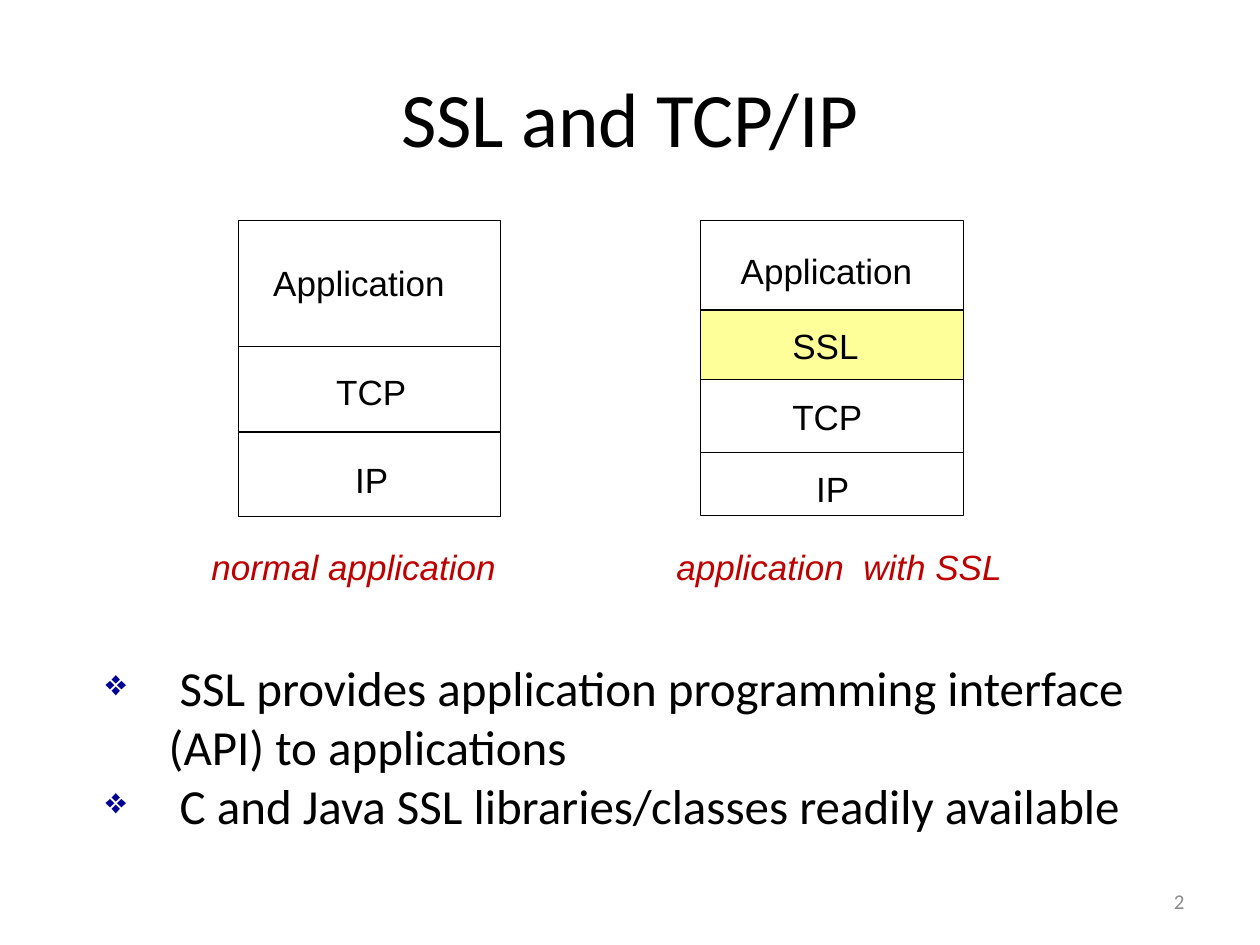
from dataclasses import dataclass

import pptx
import pptx.dml.color
import pptx.enum.shapes
import pptx.enum.text
import pptx.oxml
import pptx.oxml.ns
import pptx.util
from pptx.util import Inches

ALIGN = pptx.enum.text.PP_ALIGN
ANCHOR = pptx.enum.text.MSO_ANCHOR
COLORS = {
    "text": "000000",
    "caption": "C00000",
    "highlight": "FFFF99",
    "bullet": "000099",
    "page": "8C8C8C",
}
STACK_TOP = 1.75
LABEL_HEIGHT = 0.44
CAPTION_TOP = 4.28


@dataclass
class Layer:
    name: str
    height: float
    label_left: float
    label_top: float
    label_width: float
    fill: str | None = None


@dataclass
class Stack:
    left: float
    width: float
    layers: list[Layer]
    caption: str
    caption_left: float
    caption_width: float


STACKS = [
    Stack(1.89, 2.08, [
        Layer("Application", 1, 2.07, 2.03, 1.58),
        Layer("TCP", 0.68, 2.57, 2.89, 0.76),
        Layer("IP", 0.67, 2.72, 3.59, 0.47),
    ], "normal application", 1.58, 2.54),
    Stack(5.56, 2.09, [
        Layer("Application", 0.71, 5.78, 1.93, 1.58),
        Layer("SSL", 0.55, 6.19, 2.53, 0.74, "highlight"),
        Layer("TCP", 0.58, 6.19, 3.09, 0.77),
        Layer("IP", 0.5, 6.38, 3.66, 0.47),
    ], "application  with SSL", 5.27, 2.88),
]
BULLETS = [
    " SSL provides application programming interface (API) to applications",
    " C and Java SSL libraries/classes readily available",
]


def rgb(name: str) -> pptx.dml.color.RGBColor:
    return pptx.dml.color.RGBColor.from_string(COLORS[name])


def add_text(slide, lines: list[str], left: float, top: float, width: float,
             height: float, *, size: float = 20, font: str = "Arial",
             color: str = "text", italic: bool = False, wrap: bool = False,
             align=ALIGN.LEFT, anchor=ANCHOR.TOP):
    """Add a text box with one paragraph per line and return its text frame."""
    box = slide.shapes.add_textbox(
        Inches(left), Inches(top), Inches(width), Inches(height))
    frame = box.text_frame
    frame.word_wrap = wrap
    frame.vertical_anchor = anchor
    for index, line in enumerate(lines):
        paragraph = frame.add_paragraph() if index else frame.paragraphs[0]
        paragraph.alignment = align
        run = paragraph.add_run()
        run.text = line
        run.font.size = pptx.util.Pt(size)
        run.font.name = font
        run.font.italic = italic
        run.font.color.rgb = rgb(color)
    return frame


def add_bullet(paragraph) -> None:
    properties = paragraph._p.get_or_add_pPr()
    properties.set("marL", str(Inches(0.5)))
    properties.set("indent", str(-Inches(0.5)))
    namespace = pptx.oxml.ns.nsdecls("a")
    for element in (
        f'<a:buClr {namespace}><a:srgbClr val="{COLORS["bullet"]}"/></a:buClr>',
        f'<a:buSzPct {namespace} val="74000"/>',
        f'<a:buChar {namespace} char="❖"/>',
    ):
        properties.append(pptx.oxml.parse_xml(element))


def draw_stack(slide, stack: Stack) -> None:
    top = STACK_TOP
    for layer in stack.layers:
        box = slide.shapes.add_shape(
            pptx.enum.shapes.MSO_SHAPE.RECTANGLE, Inches(stack.left),
            Inches(top), Inches(stack.width), Inches(layer.height))
        box.shadow.inherit = False
        box.line.color.rgb = rgb("text")
        box.line.width = pptx.util.Pt(0.75)
        if layer.fill:
            box.fill.solid()
            box.fill.fore_color.rgb = rgb(layer.fill)
        else:
            box.fill.background()
        add_text(slide, [layer.name], layer.label_left, layer.label_top,
                 layer.label_width, LABEL_HEIGHT)
        top += layer.height
    add_text(slide, [stack.caption], stack.caption_left, CAPTION_TOP,
             stack.caption_width, LABEL_HEIGHT, color="caption", italic=True)


def main() -> None:
    deck = pptx.Presentation()
    deck.slide_width, deck.slide_height = Inches(10), Inches(7.5)
    slide = deck.slides.add_slide(deck.slide_layouts[6])
    add_text(slide, ["SSL and TCP/IP"], 0.5, 0.3, 9, 1.25, size=44,
             font="Calibri", wrap=True, align=ALIGN.CENTER,
             anchor=ANCHOR.MIDDLE)
    for stack in STACKS:
        draw_stack(slide, stack)
    points = add_text(slide, BULLETS, 0.74, 5.17, 8.42, 1.52, size=28,
                      font="Calibri", wrap=True)
    for paragraph in points.paragraphs:
        add_bullet(paragraph)
    add_text(slide, ["2"], 7.17, 6.95, 2.33, 0.4, size=12, font="Calibri",
             color="page", wrap=True, align=ALIGN.RIGHT, anchor=ANCHOR.MIDDLE)
    deck.save("out.pptx")


if __name__ == "__main__":
    main()
